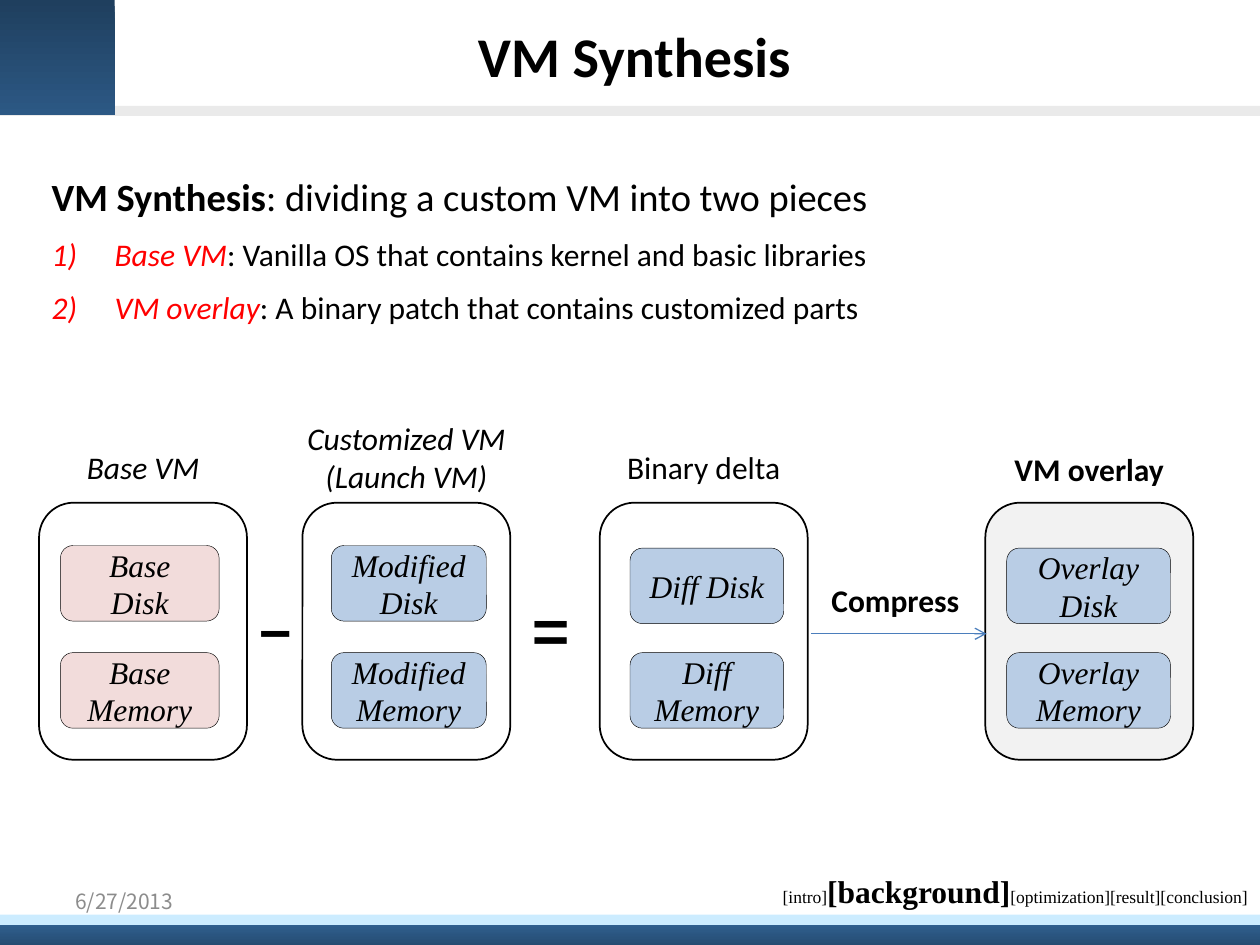
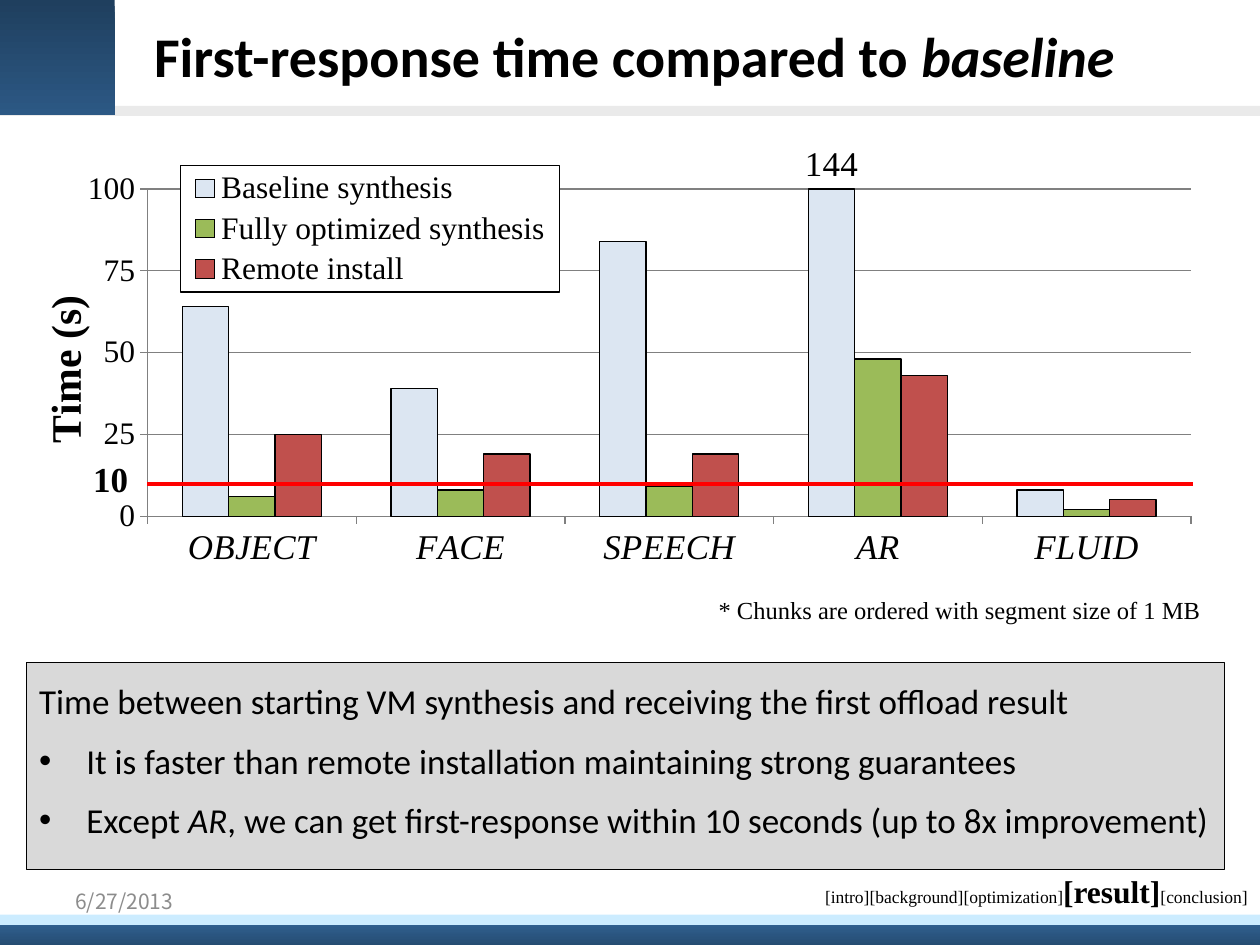
from dataclasses import dataclass

from lxml import etree
from pptx import Presentation
from pptx import util as u
from pptx.chart.data import CategoryChartData
from pptx.dml.color import RGBColor
from pptx.enum import chart as ch, shapes, text
from pptx.oxml import ns, parse_xml


@dataclass(frozen=True)
class Theme:
    """Colours, fonts and type sizes of the deck."""
    sans: str = "Calibri"
    serif: str = "Times New Roman"
    cjk: str = "Noto Sans CJK KR"
    ink: str = "000000"
    grey: str = "8C8C8C"
    axis: str = "808080"
    red: str = "FF0000"
    arrow: str = "4B7EBC"
    rule: str = "EAEAEA"
    sky: str = "CCECFF"
    footer: tuple = ("336699", "24496D")
    corner: tuple = ("1F3F5E", "2C5884")
    panel: str = "D9D9D9"
    result: str = "F2F2F2"
    pink: str = "F2DCDB"
    blue: str = "B9CDE5"
    series: tuple = ("DCE6F2", "9BBB59", "C0504D")
    title: int = 32
    lead: int = 22
    large: int = 20
    normal: int = 18
    note: int = 14
    date: int = 12
    small: int = 10
    symbol: int = 36
    axis_title: int = 24


@dataclass(frozen=True)
class Box:
    """A region counted in grid columns and rows."""
    x: float
    y: float
    w: float
    h: float

    def sub(self, dx, dy, w, h):
        """Return a box placed relative to this one."""
        return Box(self.x + dx, self.y + dy, w, h)

    def emu(self):
        """Return left, top, width and height for python-pptx."""
        return [round(v * CELL) for v in (self.x, self.y, self.w, self.h)]


T = Theme()
COLS, ROWS = 100, 75
CELL = u.Inches(10) // COLS
SECTIONS = ("intro", "background", "optimization", "result", "conclusion")
CENTER, RIGHT = text.PP_ALIGN.CENTER, text.PP_ALIGN.RIGHT
MIDDLE = text.MSO_ANCHOR.MIDDLE


def rgb(value):
    """Turn a hex string into a colour."""
    return RGBColor.from_string(value)


def style(font, size, name=T.sans, color=T.ink, bold=False, italic=False):
    """Format a font."""
    font.size, font.name, font.bold, font.italic = u.Pt(size), name, bold, italic
    font.color.rgb = rgb(color)


def write(p, runs, align=None, **base):
    """Add (text, changes) runs to a paragraph, breaking lines at newlines."""
    p.alignment = align
    for words, changes in runs:
        for i, line in enumerate(words.split("\n")):
            if i:
                p.add_line_break()
            r = p.add_run()
            r.text = line
            style(r.font, **{**base, **changes})


def label(s, box, runs, align=None, grow=True, **base):
    """Add an unwrapped text box."""
    tf = s.shapes.add_textbox(*box.emu()).text_frame
    tf.word_wrap = False
    tf.auto_size = text.MSO_AUTO_SIZE.SHAPE_TO_FIT_TEXT if grow else text.MSO_AUTO_SIZE.NONE
    write(tf.paragraphs[0], runs, align, **base)
    return tf


def paint(sp, fill=None, line=None):
    """Set a solid, two-stop gradient or empty fill, and a black outline width."""
    if isinstance(fill, tuple):
        sp.fill.gradient()
        sp.fill.gradient_angle = 270
        for stop, color in zip(sp.fill.gradient_stops, fill):
            stop.color.rgb = rgb(color)
    elif fill:
        sp.fill.solid()
        sp.fill.fore_color.rgb = rgb(fill)
    else:
        sp.fill.background()
    if line:
        sp.line.color.rgb = rgb(T.ink)
        sp.line.width = u.Pt(line)
    else:
        sp.line.fill.background()


def block(s, box, fill=None, line=None, kind=shapes.MSO_SHAPE.RECTANGLE):
    """Add a shadowless preset shape."""
    sp = s.shapes.add_shape(kind, *box.emu())
    sp.shadow.inherit = False
    paint(sp, fill, line)
    return sp


def rule(s, box, color, width, arrow=False):
    """Draw a straight line along a box's diagonal."""
    x, y, w, h = box.emu()
    c = s.shapes.add_connector(shapes.MSO_CONNECTOR.STRAIGHT, x, y, x + w, y + h)
    c.line.color.rgb, c.line.width = rgb(color), u.Pt(width)
    sp_pr = c._element.spPr
    if arrow:
        etree.SubElement(sp_pr.find(ns.qn("a:ln")), ns.qn("a:tailEnd"), type="arrow")
    etree.SubElement(sp_pr, ns.qn("a:effectLst"))


def frame(prs, title, current, trail_width):
    """Start a slide with its bands, title, date and section trail."""
    s = prs.slides.add_slide(prs.slide_layouts[1])
    for box, fill in ((Box(0, 8.4, COLS, 0.8), T.rule), (Box(0, 72.8, COLS, 2.5), T.footer),
                      (Box(0, 72.6, COLS, 0.8), T.sky), (Box(0, 0, 9.1, 9.1), T.corner)):
        block(s, box, fill)
    sp = s.shapes.title
    sp.left, sp.top, sp.width, sp.height = Box(3.5, 0.5, 93.7, 7.8).emu()
    sp.text_frame.auto_size = text.MSO_AUTO_SIZE.NONE
    sp.text_frame.vertical_anchor = MIDDLE
    write(sp.text_frame.paragraphs[0], title, CENTER, size=T.title, bold=True)
    date = label(s, Box(5, 69.5, 23.3, 4), [("6/27/2013", {})], grow=False,
                 size=T.date, name=T.cjk, color=T.grey)
    date.vertical_anchor = MIDDLE
    trail = [(f"[{name}]", {"size": T.normal, "bold": True} if name == current else {})
             for name in SECTIONS]
    label(s, Box(COLS - trail_width, 68.7, trail_width, 4), trail, RIGHT,
          size=T.small, name=T.serif)
    return s


def body(s, box, lead, items, bullet, indent, lead_size, item_size):
    """Fill the body placeholder with a lead line and a bulleted list."""
    sp = s.placeholders[1]
    sp.left, sp.top, sp.width, sp.height = box.emu()
    tf = sp.text_frame
    tf.auto_size = text.MSO_AUTO_SIZE.NONE
    for i, runs in enumerate([lead, *items]):
        p = tf.add_paragraph() if i else tf.paragraphs[0]
        p.line_spacing = 1.25
        tag, attrs = bullet if i else ("a:buNone", {})
        margin = round(indent * CELL) if i else 0
        p_pr = p._p.get_or_add_pPr()
        p_pr.set("marL", str(margin))
        p_pr.set("indent", str(-margin))
        etree.SubElement(p_pr, ns.qn(tag), **attrs)
        write(p, runs, size=item_size if i else lead_size)
    return sp


def stage(s, box, caption, caption_size, caption_style, cells, cell_box, cell_fill, fill=None):
    """Draw a captioned machine frame holding a disk and a memory cell."""
    rounded = shapes.MSO_SHAPE.ROUNDED_RECTANGLE
    block(s, box, fill, 1, rounded)
    width, height, rise = caption_size
    label(s, box.sub((box.w - width) / 2, -rise, width, height), [(caption, caption_style)],
          CENTER, size=T.normal)
    dx, dy, cell_width = cell_box
    for name, top in zip(cells, (dy, 11.9)):
        sp = block(s, box.sub(dx, top, cell_width, 6), cell_fill, 0.25, rounded)
        sp.text_frame.word_wrap = True
        sp.text_frame.vertical_anchor = MIDDLE
        write(sp.text_frame.paragraphs[0], [(name, {})], CENTER,
              size=T.normal, name=T.serif, italic=True)


def synthesis_diagram(s, box):
    """Place the four machine stages with the signs between them."""
    italic, bold = {"italic": True}, {"bold": True}
    stages = (
        (0, "Base VM", (11.2, 4, 4.8), italic, ("Base Disk", "Base Memory"),
         (1.7, 3.4, 12.6), T.pink),
        (20.9, "Customized VM\n(Launch VM)", (18.1, 7.1, 7.1), italic,
         ("Modified Disk", "Modified Memory"), (2.3, 3.4, 12.3), T.blue),
        (44.5, "Binary delta", (14.3, 4, 4.8), {}, ("Diff Disk", "Diff Memory"),
         (2.4, 3.6, 12.2), T.blue),
        (75.1, "VM overlay", (14, 4, 4.7), bold, ("Overlay Disk", "Overlay Memory"),
         (1.7, 3.6, 13), T.blue, T.result))
    for dx, *parts in stages:
        stage(s, box.sub(dx, 0, 16.5, box.h), *parts)
    for sign, dx, dy, w in (("–", 16.4, 6.4, 4.6), ("=", 38.2, 6.7, 5.6)):
        label(s, box.sub(dx, dy, w, 7.1), [(sign, {})], size=T.symbol, name=T.cjk, bold=True)
    label(s, box.sub(61.9, 5.7, 12.2, 4), [("Compress", bold)], size=T.normal)
    rule(s, box.sub(61.3, 10.4, 13.9, 0), T.arrow, 0.75, arrow=True)


def place(parent, index, x, y, w, h, inner=False):
    """Give a chart part a fixed place as shares of the chart."""
    for old in parent.findall(ns.qn("c:layout")):
        parent.remove(old)
    layout = etree.Element(ns.qn("c:layout"))
    manual = etree.SubElement(layout, ns.qn("c:manualLayout"))
    if inner:
        etree.SubElement(manual, ns.qn("c:layoutTarget"), val="inner")
    for tag in ("xMode", "yMode"):
        etree.SubElement(manual, ns.qn(f"c:{tag}"), val="edge")
    for tag, value in zip("xywh", (x, y, w, h)):
        etree.SubElement(manual, ns.qn(f"c:{tag}"), val=str(value))
    parent.insert(index, layout)


def chart_legend(chart):
    """Add an outlined legend over the plot."""
    chart.has_legend = True
    legend = chart.legend
    legend.position = ch.XL_LEGEND_POSITION.RIGHT
    legend.include_in_layout = True
    style(legend.font, T.normal, T.serif)
    place(legend._element, 1, 0.127, 0.04, 0.32, 0.3)
    legend._element.find(ns.qn("c:overlay")).addnext(parse_xml(
        f'<c:spPr {ns.nsdecls("c", "a")}><a:solidFill><a:srgbClr val="FFFFFF"/></a:solidFill>'
        f'<a:ln w="9525"><a:solidFill><a:srgbClr val="{T.ink}"/></a:solidFill></a:ln></c:spPr>'))


def response_chart(s, box):
    """Draw the response-time columns with the ten-second limit."""
    data = CategoryChartData()
    data.categories = ("OBJECT", "FACE", "SPEECH", "AR", "FLUID")
    data.add_series("Baseline synthesis", (64, 39, 84, 144, 8))
    data.add_series("Fully optimized synthesis", (6, 8, 9, 48, 2))
    data.add_series("Remote install", (25, 19, 19, 43, 5))
    chart = s.shapes.add_chart(ch.XL_CHART_TYPE.COLUMN_CLUSTERED, *box.emu(), data).chart
    chart.has_title = False
    style(chart.font, T.large, T.serif)
    plot = chart.plots[0]
    plot.gap_width, plot.overlap, plot.vary_by_categories = 150, 0, False
    for series, color in zip(plot.series, T.series):
        series.invert_if_negative = False
        paint(series.format, color, 0.75)
    baseline = plot.series[0]
    baseline.data_labels.show_value = False
    tall = baseline.points[3].data_label
    style(tall.font, T.large, T.serif)
    tall.position = ch.XL_LABEL_POSITION.OUTSIDE_END
    cat, val = chart.category_axis, chart.value_axis
    style(cat.tick_labels.font, T.large, T.serif, italic=True)
    style(val.tick_labels.font, T.normal, T.serif)
    val.tick_labels.number_format = "#,##0"
    val.tick_labels.number_format_is_linked = False
    val.minimum_scale, val.maximum_scale, val.major_unit = 0, 100, 25
    val.has_major_gridlines = True
    for line in (cat.format.line, val.format.line, val.major_gridlines.format.line):
        line.color.rgb, line.width = rgb(T.axis), u.Pt(0.75)
    for axis in (cat, val):
        axis.major_tick_mark = ch.XL_TICK_MARK.OUTSIDE
        axis.minor_tick_mark = ch.XL_TICK_MARK.NONE
    tf = val.axis_title.text_frame
    tf._txBody.bodyPr.set("rot", "-5400000")
    write(tf.paragraphs[0], [("Time (s)", {})], size=T.axis_title, name=T.serif, bold=True)
    place(plot._element.getparent(), 0, 0.099, 0.096, 0.881, 0.775, inner=True)
    chart_legend(chart)
    rule(s, box.sub(9.3, 26.9, 83, 0), T.red, 2.25)
    label(s, box.sub(4, 24.3, 5.3, 5), [("10", {})], grow=False,
          size=T.large, name=T.serif, bold=True)
    label(s, box.sub(52.8, 35.2, 41.1, 3.4),
          [("* Chunks are ordered with segment size of 1 MB", {})], RIGHT,
          size=T.note, name=T.serif)


def synthesis_slide(prs):
    """Build the slide that defines VM synthesis."""
    s = frame(prs, [("VM Synthesis", {})], "background", 39.7)
    term = {"color": T.red, "italic": True}
    body(s, Box(3.1, 12.3, 91.9, 25.2),
         [("VM Synthesis", {"bold": True}), (": dividing a custom VM into two pieces", {})],
         [[("Base VM", term), (": Vanilla OS that contains kernel and basic libraries", {})],
          [("VM overlay", term), (": A binary patch that contains customized parts", {})]],
         ("a:buAutoNum", {"type": "arabicParenR"}), 5, T.lead, T.normal)
    synthesis_diagram(s, Box(3.1, 39.9, 91.6, 20.4))


def response_slide(prs):
    """Build the slide that compares response times."""
    italic = {"italic": True}
    s = frame(prs, [("First-response time compared to ", {}), ("baseline", italic)],
              "result", 36.1)
    panel = body(
        s, Box(2.1, 52.6, 95.1, 16.4),
        [("Time between starting VM synthesis and receiving the first offload result", {})],
        [[("It is faster than remote installation maintaining strong guarantees", {})],
         [("Except ", {}), ("AR", italic),
          (", we can get first-response within 10 seconds (up to 8x improvement)", {})]],
        ("a:buChar", {"char": "•"}), 3.75, T.large, T.large)
    paint(panel, T.panel, 0.75)
    response_chart(s, Box(2.4, 11.5, 94, 33.8))


def main():
    """Build and save the deck."""
    prs = Presentation()
    prs.slide_width, prs.slide_height = COLS * CELL, ROWS * CELL
    synthesis_slide(prs)
    response_slide(prs)
    prs.save("out.pptx")


if __name__ == "__main__":
    main()
